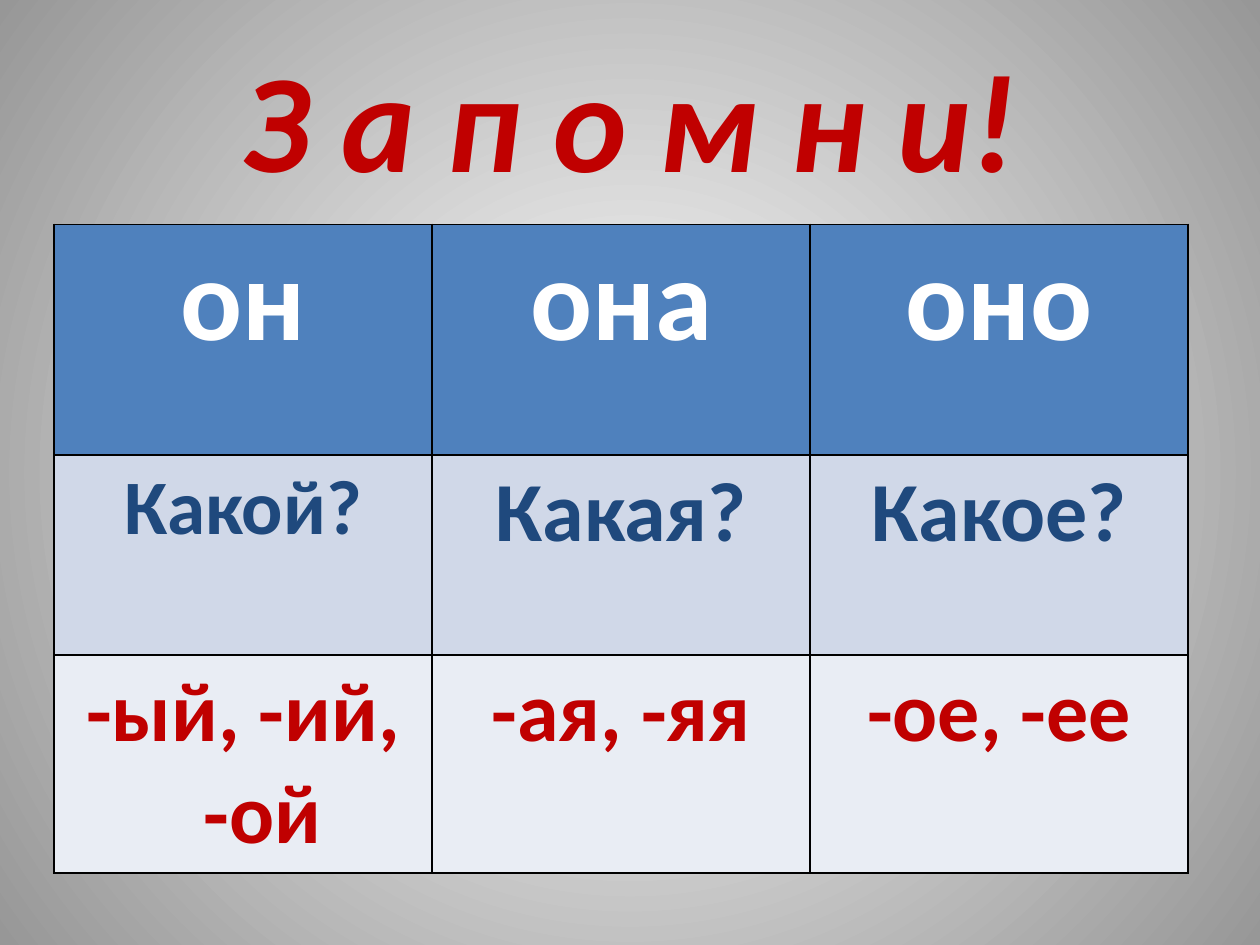
from lxml import etree
from pptx import Presentation
from pptx.dml.color import RGBColor
from pptx.enum.text import MSO_ANCHOR, PP_ALIGN
from pptx.oxml.ns import qn
from pptx.util import Inches, Pt

CENTER = PP_ALIGN.CENTER
MIDDLE = MSO_ANCHOR.MIDDLE
TOP = MSO_ANCHOR.TOP

WHITE = RGBColor(0xFF, 0xFF, 0xFF)
GRAY = RGBColor(0x97, 0x97, 0x97)
BLACK = RGBColor(0x00, 0x00, 0x00)
RED = RGBColor(0xC0, 0x00, 0x00)
NAVY = RGBColor(0x1F, 0x49, 0x7D)
BLUE = RGBColor(0x4F, 0x81, 0xBD)
PALE_BLUE = RGBColor(0xD0, 0xD8, 0xE8)
PALE_GRAY = RGBColor(0xE9, 0xED, 0xF4)

TITLE_ONLY = 5
FONT = "Calibri"

# Each row: height, fill, text colour, then (text, size) for each gender
ROWS = [
    (1.83, BLUE, WHITE, [("он", 66), ("она", 66), ("оно", 66)]),
    (1.59, PALE_BLUE, NAVY, [("Какой?", 44), ("Какая?", 48), ("Какое?", 48)]),
    (1.72, PALE_GRAY, RED, [("-ый, -ий, -ой", 48), ("-ая, -яя", 48), ("-ое, -ее", 48)]),
]


def write_text(text_frame, text, *, size, color, italic=False, hanging=0):
    """Write one bold centred paragraph, with an optional hanging indent."""
    paragraph = text_frame.paragraphs[0]
    paragraph.alignment = CENTER
    run = paragraph.add_run()
    run.text = text
    font = run.font
    font.name, font.size, font.color.rgb = FONT, Pt(size), color
    font.bold, font.italic = True, italic
    if hanging:
        properties = paragraph._p.get_or_add_pPr()
        properties.set("marL", str(Inches(hanging)))
        properties.set("indent", str(-Inches(hanging)))


def add_borders(cell, color, width):
    """Draw a solid line on all four sides of a cell, ahead of its fill."""
    properties = cell._tc.get_or_add_tcPr()
    for index, side in enumerate(("lnL", "lnR", "lnT", "lnB")):
        line = etree.Element(qn(f"a:{side}"), w=str(Pt(width)))
        solid = etree.SubElement(line, qn("a:solidFill"))
        etree.SubElement(solid, qn("a:srgbClr"), val=str(color))
        properties.insert(index, line)


class SlideBuilder:
    def __init__(self, presentation):
        self.slide = presentation.slides.add_slide(presentation.slide_layouts[TITLE_ONLY])

    def background(self, inner, outer):
        fill = self.slide.background.fill
        fill.gradient()
        for stop, color, position in zip(fill.gradient_stops, (inner, outer), (0, 1)):
            stop.color.rgb = color
            stop.position = position
        # Turn the linear gradient into a circular one around the centre
        linear = next(self.slide.element.iter(qn("a:lin")))
        circle = etree.Element(qn("a:path"), path="circle")
        etree.SubElement(circle, qn("a:fillToRect"), l="50000", t="50000", r="50000", b="50000")
        linear.getparent().replace(linear, circle)

    def title(self, text, left, top, width, height):
        title = self.slide.shapes.title
        title.left, title.top = Inches(left), Inches(top)
        title.width, title.height = Inches(width), Inches(height)
        title.text_frame.vertical_anchor = MIDDLE
        write_text(title.text_frame, text, size=80, color=RED, italic=True)

    def table(self, rows, left, top, width):
        height = sum(row[0] for row in rows)
        table = self.slide.shapes.add_table(
            len(rows), len(rows[0][3]), Inches(left), Inches(top), Inches(width), Inches(height)
        ).table
        for row, (row_height, fill, color, entries) in zip(table.rows, rows):
            row.height = Inches(row_height)
            for cell, (text, size) in zip(row.cells, entries):
                cell.fill.solid()
                cell.fill.fore_color.rgb = fill
                cell.vertical_anchor = TOP
                add_borders(cell, BLACK, 1)
                hanging = 0.31 if text.count(",") > 1 else 0
                write_text(cell.text_frame, text, size=size, color=color, hanging=hanging)


def main():
    presentation = Presentation()
    presentation.slide_width, presentation.slide_height = Inches(10), Inches(7.5)

    builder = SlideBuilder(presentation)
    builder.background(WHITE, GRAY)
    # Endings of adjectives by gender
    builder.table(ROWS, 0.43, 1.78, 9)
    builder.title("З а п о м н и!", 0.5, 0.3, 9, 1.25)

    presentation.save("out.pptx")


if __name__ == "__main__":
    main()
